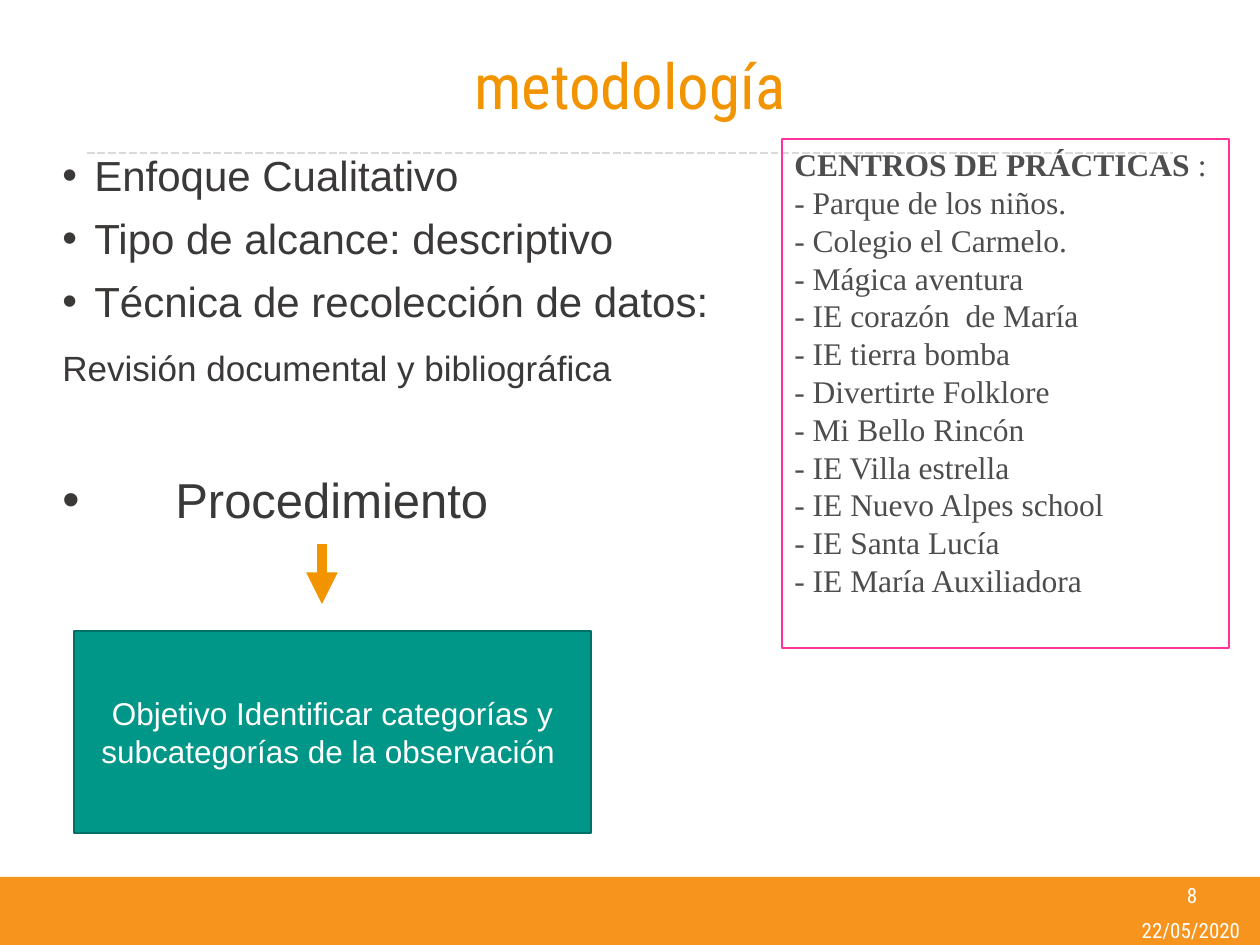
from dataclasses import dataclass

from lxml import etree
from pptx import Presentation
from pptx import util as u
from pptx.dml.color import RGBColor
from pptx.enum import dml, shapes, text
from pptx.oxml.ns import qn

PX = 914400 // 126
ORANGE, WHITE, CHARCOAL = "F29400", "FFFFFF", "3B3838"
HEADING, BODY, SERIF = "Roboto Condensed", "Arial", "Times New Roman"
CENTER = text.PP_ALIGN.CENTER
MIDDLE = text.MSO_ANCHOR.MIDDLE


@dataclass
class Box:
    left: int
    top: int
    width: int
    height: int

    def emu(self) -> list[int]:
        """Return left, top, width and height in EMU."""
        return [v * PX for v in (self.left, self.top, self.width, self.height)]


@dataclass
class Point:
    words: str
    size: int
    before: int
    indent: int


@dataclass
class Footer:
    words: str
    box: Box


POINTS = [
    Point("Enfoque Cualitativo", 24, 0, 32),
    Point("Tipo de alcance: descriptivo", 24, 10, 32),
    Point("Técnica de recolección de datos:", 24, 10, 32),
    Point("Revisión documental y bibliográfica", 20, 14, 0),
    Point("Procedimiento", 28, 50, 113),
]
FOOTERS = [
    Footer("22/05/2020", Box(1124, 917, 134, 26)),
    Footer("8", Box(1126, 876, 132, 38)),
]
CENTRES = [
    "Parque de los niños.",
    "Colegio el Carmelo.",
    "Mágica aventura",
    "IE corazón  de María",
    "IE tierra bomba",
    "Divertirte Folklore",
    "Mi Bello Rincón",
    "IE Villa estrella",
    "IE Nuevo Alpes school",
    "IE Santa Lucía",
    "IE María Auxiliadora",
]


def rgb(value: str) -> RGBColor:
    """Turn a hex string into a colour."""
    return RGBColor.from_string(value)


def style(paragraph, face: str, size: int, colour: str, align=text.PP_ALIGN.LEFT) -> None:
    """Set the font and alignment of a paragraph."""
    paragraph.alignment = align
    paragraph.font.name = face
    paragraph.font.size = u.Pt(size)
    paragraph.font.color.rgb = rgb(colour)


def next_paragraph(frame, index: int):
    """Return the first paragraph or a new one."""
    return frame.add_paragraph() if index else frame.paragraphs[0]


def add_rectangle(slide, box: Box, fill: str = "", line: str = "", weight: float = 1):
    """Draw a rectangle with an optional fill and outline."""
    rectangle = slide.shapes.add_shape(shapes.MSO_SHAPE.RECTANGLE, *box.emu())
    rectangle.shadow.inherit = False
    if fill:
        rectangle.fill.solid()
        rectangle.fill.fore_color.rgb = rgb(fill)
    else:
        rectangle.fill.background()
    if line:
        rectangle.line.color.rgb = rgb(line)
        rectangle.line.width = u.Pt(weight)
    else:
        rectangle.line.fill.background()
    return rectangle


def add_line(slide, box: Box, colour: str, weight: float):
    """Draw a straight line without a shadow."""
    left, top, width, height = box.emu()
    line = slide.shapes.add_connector(
        shapes.MSO_CONNECTOR.STRAIGHT, left, top, left + width, top + height)
    line.line.color.rgb = rgb(colour)
    line.line.width = u.Pt(weight)
    etree.SubElement(line._element.spPr, qn("a:effectLst"))
    return line


def add_title(slide, words: str, box: Box) -> None:
    """Fill and place the title placeholder."""
    title = slide.shapes.title
    title.left, title.top, title.width, title.height = box.emu()
    title.text_frame.text = words
    title.text_frame.vertical_anchor = MIDDLE
    style(title.text_frame.paragraphs[0], HEADING, 36, ORANGE, CENTER)


def add_points(slide, points: list[Point], box: Box) -> None:
    """Write the method points, bulleted where indented."""
    frame = slide.shapes.add_textbox(*box.emu()).text_frame
    frame.word_wrap = True
    for index, point in enumerate(points):
        paragraph = next_paragraph(frame, index)
        paragraph.text = point.words
        paragraph.line_spacing = 0.9
        paragraph.space_before = u.Pt(point.before)
        if point.indent:
            properties = paragraph._p.get_or_add_pPr()
            properties.set("marL", str(point.indent * PX))
            properties.set("indent", str(-point.indent * PX))
            etree.SubElement(properties, qn("a:buFont"), typeface=BODY)
            etree.SubElement(properties, qn("a:buChar"), char="•")
        style(paragraph, BODY, point.size, CHARCOAL)


def add_centres(slide, names: list[str], box: Box) -> None:
    """List the practice centres in an outlined box."""
    frame = add_rectangle(slide, box, line="FF3399", weight=0.75).text_frame
    frame.word_wrap = True
    frame.vertical_anchor = text.MSO_ANCHOR.TOP
    heading = frame.paragraphs[0]
    label = heading.add_run()
    label.text = "CENTROS DE PRÁCTICAS "
    label.font.bold = True
    heading.add_run().text = ":"
    for name in names:
        frame.add_paragraph().text = f"- {name}"
    for paragraph in frame.paragraphs:
        style(paragraph, SERIF, 18, "4D4D4F")


def add_footer(slide, footer: Footer) -> None:
    """Write a centred footer text."""
    frame = slide.shapes.add_textbox(*footer.box.emu()).text_frame
    frame.margin_top = frame.margin_bottom = 0
    frame.word_wrap = True
    frame.vertical_anchor = MIDDLE
    frame.text = footer.words
    style(frame.paragraphs[0], HEADING, 12, WHITE, CENTER)


def main() -> None:
    """Build and save the methodology slide."""
    deck = Presentation()
    deck.slide_width, deck.slide_height = u.Inches(10), u.Inches(7.5)
    slide = deck.slides.add_slide(deck.slide_layouts[5])

    add_rectangle(slide, Box(0, 877, 1260, 68), fill="F7941D")
    divider = add_line(slide, Box(87, 153, 1086, 0), "D9D9D9", 1.5)
    divider.line.dash_style = dml.MSO_LINE.SQUARE_DOT
    add_title(slide, "metodología", Box(87, 16, 1086, 136))
    add_points(slide, POINTS, Box(50, 149, 1086, 690))
    for footer in FOOTERS:
        add_footer(slide, footer)
    add_centres(slide, CENTRES, Box(782, 139, 447, 509))

    arrow = add_line(slide, Box(322, 544, 0, 60), ORANGE, 6)
    etree.SubElement(arrow.line._get_or_add_ln(), qn("a:tailEnd"), type="triangle")

    objective = add_rectangle(slide, Box(74, 631, 517, 202), "009688", "006F65").text_frame
    objective.word_wrap = True
    objective.vertical_anchor = MIDDLE
    objective.text = "Objetivo Identificar categorías y subcategorías de la observación "
    style(objective.paragraphs[0], BODY, 18, WHITE, CENTER)

    deck.save("out.pptx")


if __name__ == "__main__":
    main()
